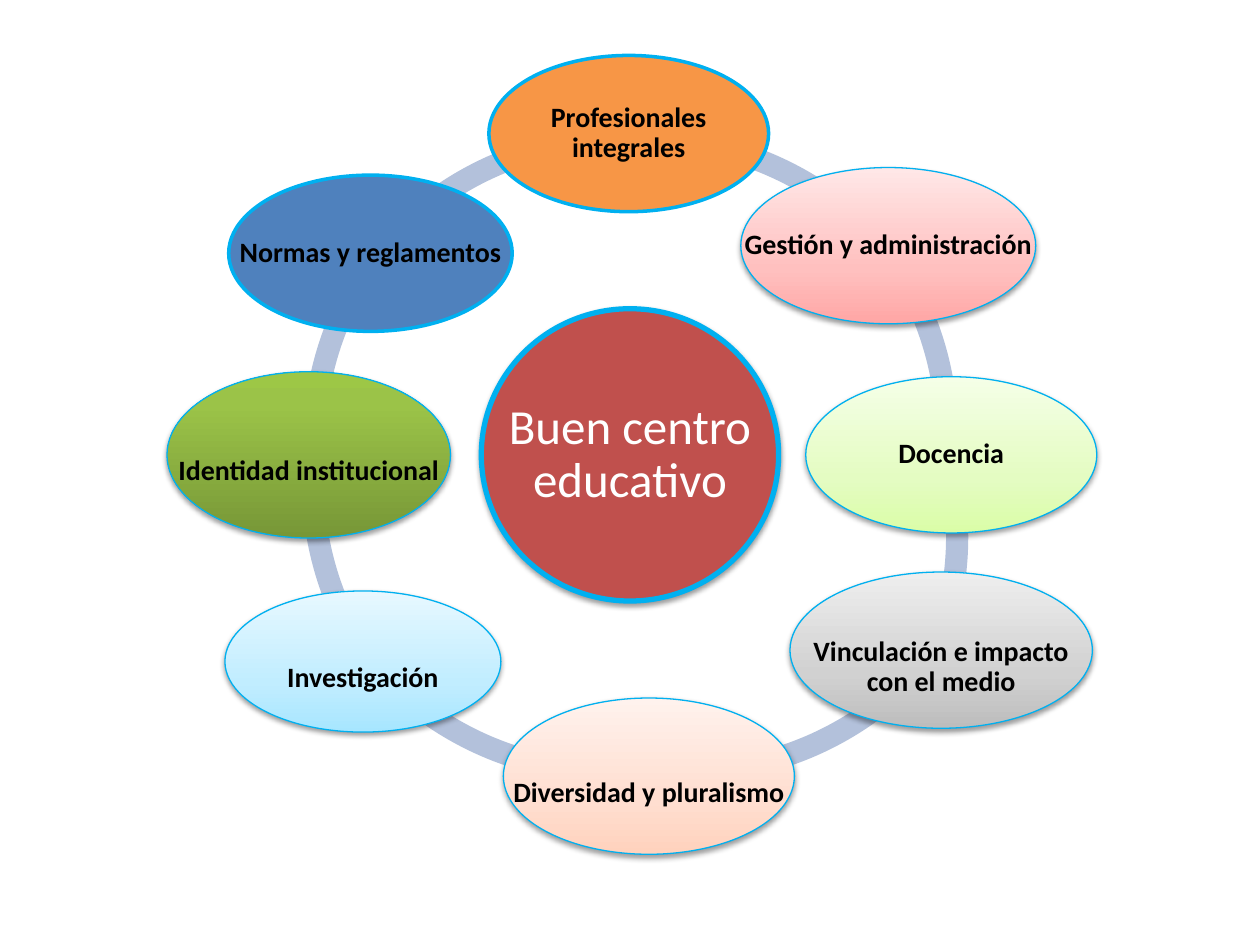
from copy import deepcopy
from dataclasses import dataclass

from lxml import etree
from pptx import Presentation
from pptx.dml.color import RGBColor
from pptx.enum.shapes import MSO_SHAPE
from pptx.enum.text import MSO_ANCHOR, PP_ALIGN
from pptx.oxml.ns import qn
from pptx.util import Inches, Pt

ELLIPSE, BLOCK_ARC = MSO_SHAPE.OVAL, MSO_SHAPE.BLOCK_ARC
MIDDLE, CENTER = MSO_ANCHOR.MIDDLE, PP_ALIGN.CENTER


@dataclass(frozen=True)
class Theme:
    font: str = "Calibri"
    ring: str = "B3C1DB"
    outline: str = "00B0F0"
    hub: str = "C0504D"
    hub_text: str = "FFFFFF"
    hub_size: int = 28
    node_text: str = "000000"
    node_size: int = 16
    orange: str = "F79646"
    blue: str = "4F81BD"
    # Gradients run from bottom to top: (position, colour)
    pink: tuple = ((0, "FFA6A5"), (0.35, "FFC0BF"), (1, "FFE7E7"))
    lime: tuple = ((0, "DAFDA7"), (0.35, "E4FCC2"), (1, "F5FFE7"))
    grey: tuple = ((0, "BDBDBD"), (0.35, "D1D1D1"), (1, "EEEEEE"))
    peach: tuple = ((0, "FFD2BD"), (0.35, "FFDED0"), (1, "FFF2ED"))
    sky: tuple = ((0, "A7E6FF"), (0.35, "C1EDFF"), (1, "E7F8FF"))
    green: tuple = ((0, "779737"), (0.8, "9BC348"), (1, "9DC746"))


@dataclass(frozen=True)
class Box:
    left: float
    top: float
    width: float
    height: float

    def around_center(self, dx, dy, width, height):
        """Box whose centre is offset from the centre of this one."""
        return Box(self.left + (self.width - width) / 2 + dx,
                   self.top + (self.height - height) / 2 + dy, width, height)

    def lengths(self):
        return [Inches(n) for n in (self.left, self.top, self.width, self.height)]


@dataclass(frozen=True)
class Node:
    text: str
    place: tuple  # centre offset x, y, then width, height
    fill: object
    drop: float = 0  # extra space above the text
    side: float = 0.02  # left and right text inset


THEME = Theme()
DIAGRAM = Box(1.32, 0.44, 7.36, 6.34)
HUB_SIZE = (2.36, 2.32)
RING_SIZE = 5.19
RING_THICKNESS = 0.034
DROP = 0.27

# Centre offset x, y, then start and end angle in degrees
ARCS = [
    (-0.07, 0, 218.86, 271.59),
    (0, -0.09, 177.96, 216.32),
    (-0.01, 0.21, 145.81, 184.78),
    (-0.15, 0.01, 83.19, 140.34),
    (0.44, 0.01, 36.85, 96.46),
    (0.09, 0.65, 345.12, 20.45),
    (0.01, -0.15, 323.51, 3.2),
    (0.12, 0, 267.41, 319.5),
]

NODES = [
    Node("Profesionales integrales", (-0.01, -2.55, 2.22, 1.24), THEME.orange, side=0.1),
    Node("Gestión y administración", (2.05, -1.66, 2.34, 1.24), THEME.pink),
    Node("Docencia", (2.55, 0, 2.31, 1.24), THEME.lime),
    Node("Vinculación e impacto con el medio", (2.47, 1.55, 2.4, 1.24), THEME.grey, DROP),
    Node("Diversidad y pluralismo", (0.15, 2.55, 2.31, 1.24), THEME.peach, DROP),
    Node("Investigación", (-2.12, 1.64, 2.19, 1.12), THEME.sky, DROP),
    Node("Identidad institucional", (-2.55, 0, 2.25, 1.32), THEME.green, DROP),
    Node("Normas y reglamentos", (-2.06, -1.6, 2.25, 1.24), THEME.blue),
]


def rgb(value):
    return RGBColor.from_string(value)


def paint(shape, fill):
    """Fill with one colour, or with a gradient given as stops."""
    if isinstance(fill, str):
        shape.fill.solid()
        shape.fill.fore_color.rgb = rgb(fill)
        return
    shape.fill.gradient()
    shape.fill.gradient_angle = 90
    stop_list = shape._element.spPr.find(".//" + qn("a:gsLst"))
    stop_list.append(deepcopy(stop_list[-1]))
    for stop, (position, color) in zip(shape.fill.gradient_stops, fill):
        stop.position = position
        stop.color.rgb = rgb(color)


def add_shadow(shape):
    effects = shape._element.spPr.find(qn("a:effectLst"))
    shadow = etree.SubElement(effects, qn("a:outerShdw"), blurRad=str(Pt(3.1)),
                              dist=str(Pt(1.6)), dir="5400000", rotWithShape="0")
    color = etree.SubElement(shadow, qn("a:srgbClr"), val="000000")
    etree.SubElement(color, qn("a:alpha"), val="38000")


def add_ellipse(group, box, fill, line_width, shadow):
    ellipse = group.shapes.add_shape(ELLIPSE, *box.lengths())
    ellipse.shadow.inherit = False
    paint(ellipse, fill)
    ellipse.line.color.rgb = rgb(THEME.outline)
    ellipse.line.width = Pt(line_width)
    if shadow:
        add_shadow(ellipse)


def add_label(group, box, text, size, color, bold, side, drop=0):
    frame = group.shapes.add_textbox(*box.lengths()).text_frame
    frame.word_wrap = True
    frame.vertical_anchor = MIDDLE
    frame.margin_left = frame.margin_right = Inches(side)
    frame.margin_top, frame.margin_bottom = Inches(0.02 + drop), Inches(0.02)
    para = frame.paragraphs[0]
    para.alignment = CENTER
    para.line_spacing = 0.9
    span = para.add_run()
    span.text = text
    span.font.name = THEME.font
    span.font.size = Pt(size)
    span.font.bold = bold
    span.font.color.rgb = rgb(color)


def add_ring(group, box):
    for dx, dy, start, end in ARCS:
        place = box.around_center(dx, dy, RING_SIZE, RING_SIZE)
        arc = group.shapes.add_shape(BLOCK_ARC, *place.lengths())
        arc.shadow.inherit = False
        paint(arc, THEME.ring)
        arc.line.fill.background()
        # Angles are stored in 60000ths of a degree, adjustments in 100000ths
        arc.adjustments[0] = start * 0.6
        arc.adjustments[1] = end * 0.6
        arc.adjustments[2] = RING_THICKNESS


def add_hub(group, box):
    place = box.around_center(0, 0, *HUB_SIZE)
    add_ellipse(group, place, THEME.hub, 3, shadow=True)
    add_label(group, place, "Buen centro educativo", THEME.hub_size,
              THEME.hub_text, False, 0.04)


def add_nodes(group, box):
    for node in NODES:
        place = box.around_center(*node.place)
        flat = isinstance(node.fill, str)
        add_ellipse(group, place, node.fill, 2 if flat else 0.75, shadow=not flat)
        add_label(group, place, node.text, THEME.node_size, THEME.node_text,
                  True, node.side, node.drop)


def main():
    deck = Presentation()
    deck.slide_width, deck.slide_height = Inches(10), Inches(7.5)
    page = deck.slides.add_slide(deck.slide_layouts[6])
    group = page.shapes.add_group_shape()
    # Ring behind, then the centre and the nodes around it
    add_ring(group, DIAGRAM)
    add_hub(group, DIAGRAM)
    add_nodes(group, DIAGRAM)
    deck.save("out.pptx")


if __name__ == "__main__":
    main()
